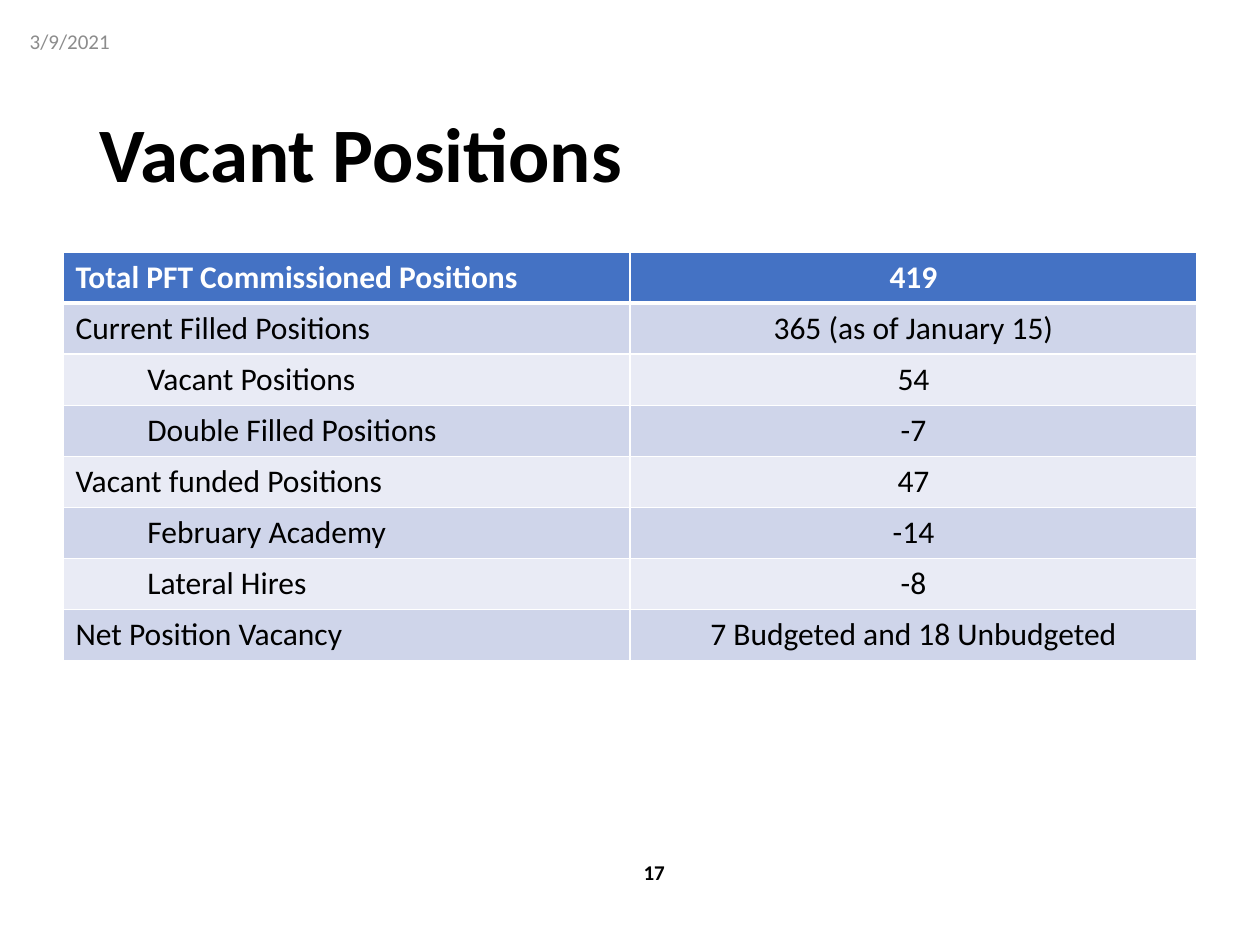
from lxml import etree
from pptx import Presentation
from pptx import util as u
from pptx.dml.color import RGBColor
from pptx.enum import text
from pptx.oxml.ns import qn

WIDTH, HEIGHT = 10, 7.5
UNIT = 0.25  # side of a grid square: 40 columns by 30 rows
LEFT, CENTER, RIGHT = text.PP_ALIGN.LEFT, text.PP_ALIGN.CENTER, text.PP_ALIGN.RIGHT
BLACK, WHITE, GRAY = "000000", "FFFFFF", "8C8C8C"
HEADER, BANDS = "4472C4", ("E9EBF5", "CFD5EA")

# Label, value, indent level
POSITIONS = [
    ("Total PFT Commissioned Positions", "419", 0),
    ("Current Filled Positions", "365 (as of January 15)", 0),
    ("Vacant Positions", "54", 1),
    ("Double Filled Positions", "-7", 1),
    ("Vacant funded Positions", "47", 0),
    ("February Academy", "-14", 1),
    ("Lateral Hires", "-8", 1),
    ("Net Position Vacancy", "7 Budgeted and 18 Unbudgeted", 0),
]


def color(value):
    return RGBColor.from_string(value)


class Page:
    font = "Calibri"
    margin, indent = 0.1, 0.57

    def __init__(self, deck):
        self.slide = deck.slides.add_slide(deck.slide_layouts[5])

    def place(self, *area):
        """Turn column, row, columns and rows into lengths."""
        return [u.Inches(count * UNIT) for count in area]

    def add_text(self, frame, words, size, hue, bold=False, align=LEFT):
        para = frame.paragraphs[0]
        para.alignment = align
        span = para.add_run()
        span.text = words
        look = {"name": self.font, "size": u.Pt(size), "bold": bold}
        for name, value in look.items():
            setattr(span.font, name, value)
        span.font.color.rgb = color(hue)
        return para

    def set_frame(self, frame):
        look = {"word_wrap": True, "auto_size": text.MSO_AUTO_SIZE.NONE,
                "vertical_anchor": text.MSO_ANCHOR.MIDDLE}
        for name, value in look.items():
            setattr(frame, name, value)

    def title(self, words, area):
        box = self.slide.shapes.title
        box.left, box.top, box.width, box.height = self.place(*area)
        self.set_frame(box.text_frame)
        para = self.add_text(box.text_frame, words, 44, BLACK, bold=True)
        para.line_spacing = 0.9

    def label(self, words, area, **look):
        box = self.slide.shapes.add_textbox(*self.place(*area))
        self.set_frame(box.text_frame)
        self.add_text(box.text_frame, words, 12, **look)

    def borders(self, cell, **widths):
        properties = cell._tc.get_or_add_tcPr()
        for side in "LRTB":
            line = etree.SubElement(properties, qn(f"a:ln{side}"),
                                    w=str(u.Pt(widths.get(side, 1))))
            fill = etree.SubElement(line, qn("a:solidFill"))
            etree.SubElement(fill, qn("a:srgbClr"), val=WHITE)

    def table(self, rows, area):
        grid = self.slide.shapes.add_table(len(rows), 2, *self.place(*area)).table
        for i, (label, value, level) in enumerate(rows):
            head = i == 0
            for j, (words, align) in enumerate([(label, LEFT), (value, CENTER)]):
                cell = grid.cell(i, j)
                # Borders come before the fill in the cell's properties
                self.borders(cell, B=3 if head else 1, T=3 if i == 1 else 1)
                cell.fill.solid()
                cell.fill.fore_color.rgb = color(HEADER if head else BANDS[i % 2])
                if j == 0:
                    cell.margin_left = u.Inches(self.margin + level * self.indent)
                self.add_text(cell.text_frame, words, 18, WHITE if head else BLACK,
                              bold=head, align=align)


def main():
    deck = Presentation()
    deck.slide_width, deck.slide_height = u.Inches(WIDTH), u.Inches(HEIGHT)
    page = Page(deck)

    # Title and table
    page.title("Vacant Positions", (2.75, 2.6, 34.5, 4.8))
    page.table(POSITIONS, (2, 8, 36, 12.95))

    # Date and page number
    page.label("3/9/2021", (0.55, 0.5, 9, 1.6), hue=GRAY)
    page.label("17", (12.5, 26.9, 9, 1.6), hue=BLACK, bold=True, align=RIGHT)

    deck.save("out.pptx")


if __name__ == "__main__":
    main()
